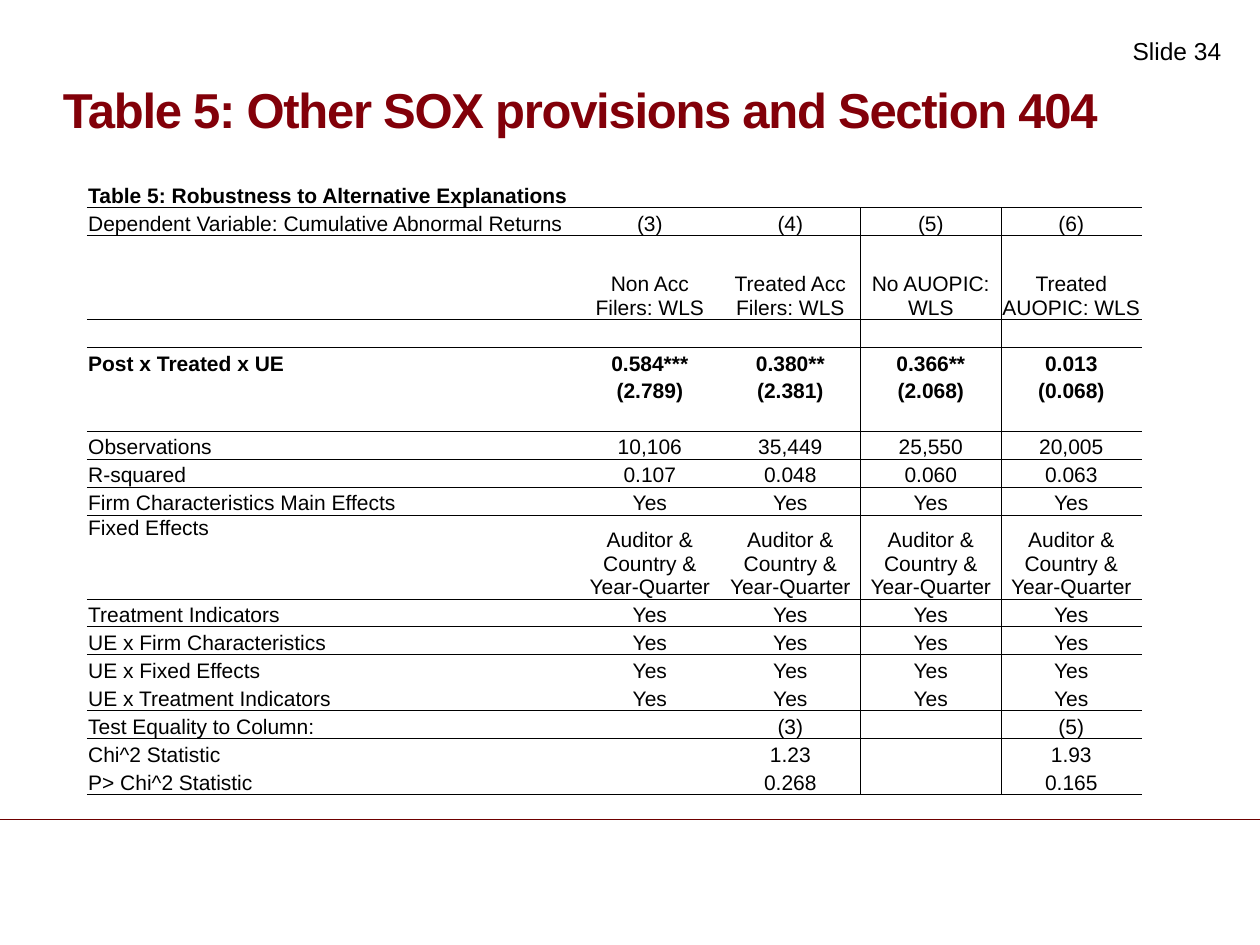
from lxml.etree import SubElement as Sub
from pptx import Presentation
from pptx.dml.color import RGBColor
from pptx.enum.text import MSO_ANCHOR as Anchor, PP_ALIGN as Align
from pptx.oxml.ns import qn
from pptx.util import Inches, Pt

TITLE = "Table 5: Other SOX provisions and Section 404"
NUMBER = "Slide 34"
YES = ["Yes"] * 4
BLANK = [""] * 5
ROWS = [
    ["Table 5: Robustness to Alternative Explanations", "", "", "", ""],
    ["Dependent Variable: Cumulative Abnormal Returns", "(3)", "(4)", "(5)", "(6)"],
    ["", "Non Acc Filers: WLS", "Treated Acc Filers: WLS",
     "No AUOPIC: WLS", "Treated AUOPIC: WLS"],
    BLANK,
    ["Post x Treated x UE", "0.584***", "0.380**", "0.366**", "0.013"],
    ["", "(2.789)", "(2.381)", "(2.068)", "(0.068)"],
    BLANK,
    ["Observations", "10,106", "35,449", "25,550", "20,005"],
    ["R-squared", "0.107", "0.048", "0.060", "0.063"],
    ["Firm Characteristics Main Effects"] + YES,
    ["Fixed Effects"] + ["Auditor & Country & Year-Quarter"] * 4,
    ["Treatment Indicators"] + YES,
    ["UE x Firm Characteristics"] + YES,
    ["UE x Fixed Effects"] + YES,
    ["UE x Treatment Indicators"] + YES,
    ["Test Equality to Column:", "", "(3)", "", "(5)"],
    ["Chi^2 Statistic", "", "1.23", "", "1.93"],
    ["P> Chi^2 Statistic", "", "0.268", "", "0.165"],
]
BOLD = {0, 4, 5}                        # rows in bold
TALL = {2, 10}                          # rows three units high
RULED = {0, 2, 6, 8, 10, 11, 14, 17}    # rows with a rule below
SPLIT = 3                               # column right of the upright rule
LEFT, TOP, WIDE, HIGH = 0.69, 1.38, 8.37, 4.93
LABEL, HEAD = 3.91, 0.27                # first column, first row
NO_STYLE = "{2D5ABB26-0587-4C30-8999-92F81FD0307C}"


def color(code):
    return RGBColor.from_string(code)


def style(para, size, code, bold=False):
    font = para.font
    font.name, font.size, font.bold = "Arial", Pt(size), bold
    font.color.rgb = color(code)


def text(words, box, size, code, bold=False):
    frame = slide.shapes.add_textbox(*map(Inches, box)).text_frame
    frame.word_wrap = True
    para = frame.paragraphs[0]
    para.text = words
    style(para, size, code, bold)
    return frame


def border(cell, sides):
    props = cell._tc.get_or_add_tcPr()
    for side in sides:
        line = Sub(props, qn("a:ln" + side), w=str(Pt(0.5)))
        fill = Sub(line, qn("a:solidFill"))
        Sub(fill, qn("a:srgbClr"), val="000000")


deck = Presentation()
deck.slide_width, deck.slide_height = Inches(10), Inches(7.5)
slide = deck.slides.add_slide(deck.slide_layouts[6])

# Footer rule
rule = slide.shapes.add_connector(1, 0, Inches(6.5), Inches(10), Inches(6.5))
rule.line.color.rgb = color("6E0000")
rule.line.width = Pt(0.25)
Sub(rule._element.spPr, qn("a:effectLst"))

# Slide number and title
text(NUMBER, (8.89, 0.24, 1.11, 0.47), 14, "000000")
title = text(TITLE, (0.5, 0.29, 9, 0.81), 28, "820009", True)
title.margin_left = title.margin_right = title.margin_top = title.margin_bottom = 0
title.vertical_anchor = Anchor.BOTTOM
lead = title.paragraphs[0]
lead.line_spacing = 0.9
lead.runs[0]._r.get_or_add_rPr().set("spc", "-70")

# Table grid
cols = len(ROWS[0])
grid = slide.shapes.add_table(
    len(ROWS), cols, *map(Inches, (LEFT, TOP, WIDE, HIGH))).table
grid.first_row = grid.horz_banding = False
grid._tbl.tblPr.find(qn("a:tableStyleId")).text = NO_STYLE
for c, col in enumerate(grid.columns):
    col.width = Inches((WIDE - LABEL) / (cols - 1) if c else LABEL)
unit = (HIGH - HEAD) / (len(ROWS) - 1 + 2 * len(TALL))
for r, row in enumerate(grid.rows):
    row.height = Inches(unit * (3 if r in TALL else 1) if r else HEAD)

# Table cells
for r, row in enumerate(ROWS):
    for c, words in enumerate(row):
        cell = grid.cell(r, c)
        cell.margin_left = cell.margin_right = cell.margin_top = Inches(0.01)
        cell.margin_bottom = 0
        top = words == "Fixed Effects"
        cell.vertical_anchor = Anchor.TOP if top else Anchor.BOTTOM
        sides = {"L": r and c == SPLIT, "R": r and c == SPLIT - 1,
                 "T": r - 1 in RULED, "B": r in RULED}
        border(cell, [side for side, on in sides.items() if on])
        cell.fill.background()
        para = cell.text_frame.paragraphs[0]
        para.text = words
        para.alignment = Align.CENTER if c else Align.LEFT
        style(para, 12, "000000", r in BOLD)
    if r == 0:
        grid.cell(0, 0).text_frame.word_wrap = False

deck.save("out.pptx")
